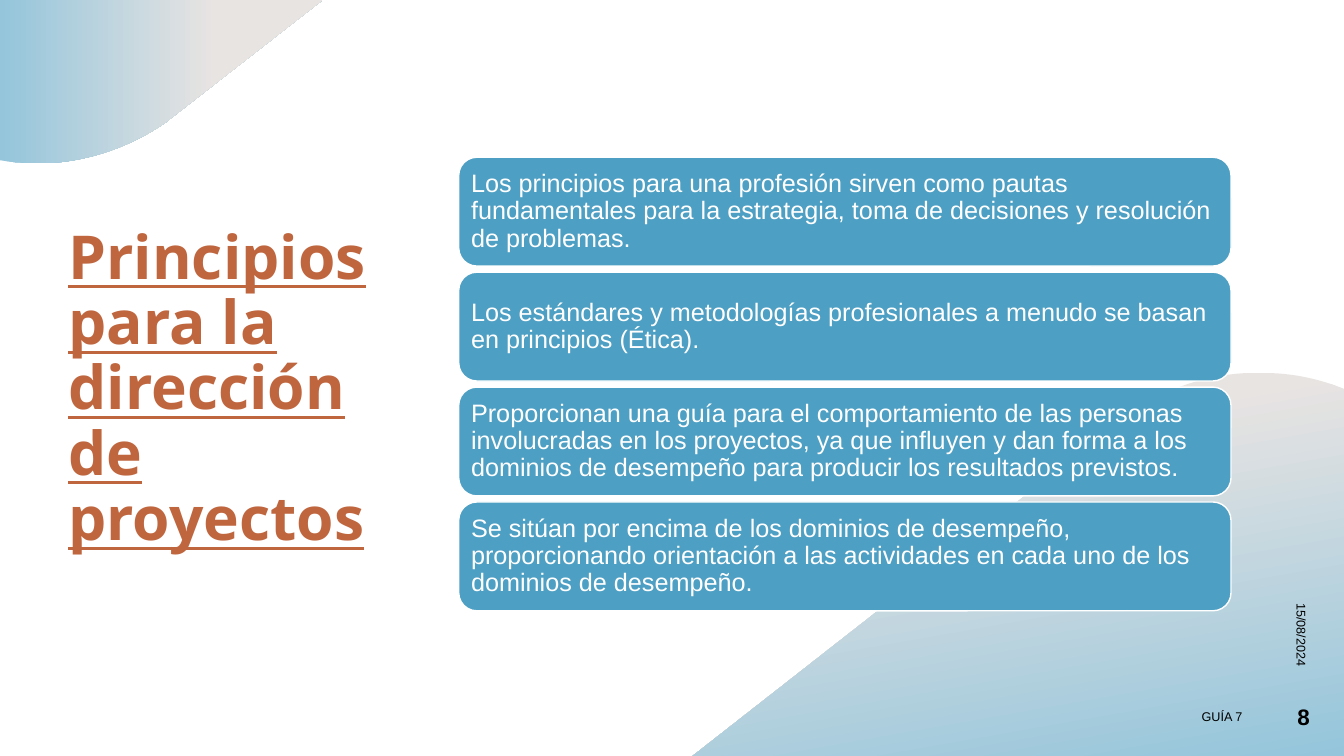
from pptx import Presentation
from pptx.dml.color import RGBColor
from pptx.enum.shapes import MSO_SHAPE as SHAPE
from pptx.enum.text import MSO_ANCHOR as ANCHOR, PP_ALIGN as ALIGN
from pptx.util import Pt

PX = 9144  # 100 px to the inch
BLUE = RGBColor(0x4D, 0x9F, 0xC3)
PALE_BLUE = RGBColor(0x94, 0xC5, 0xDB)
SAND = RGBColor(0xE8, 0xE4, 0xE2)
RUST = RGBColor(0xBF, 0x66, 0x3F)
WHITE = RGBColor(0xFF, 0xFF, 0xFF)
BLACK = RGBColor(0x00, 0x00, 0x00)

prs = Presentation()
prs.slide_width, prs.slide_height = 1333 * PX, 750 * PX
s = prs.slides.add_slide(prs.slide_layouts[6])


def outline(start, segments, steps=16):
    """Points of an outline; a segment is one point or three Bézier points."""
    points = [start]
    for seg in segments:
        if len(seg) == 1:
            points.append(seg[0])
            continue
        curve = [points[-1], *seg]
        for i in range(1, steps + 1):
            t = i / steps
            weights = ((1 - t) ** 3, 3 * t * (1 - t) ** 2, 3 * t * t * (1 - t), t ** 3)
            points.append(tuple(sum(w * c[k] for w, c in zip(weights, curve)) for k in (0, 1)))
    return points


def write(sp, text, font, anchor=ANCHOR.MIDDLE, align=ALIGN.LEFT, spacing=1.0, inset=None):
    tf = sp.text_frame
    tf.word_wrap = True
    tf.vertical_anchor = anchor
    if inset is not None:
        tf.margin_left = tf.margin_right = tf.margin_top = tf.margin_bottom = inset * PX
    p = tf.paragraphs[0]
    p.alignment, p.line_spacing = align, spacing
    r = p.add_run()
    r.text = text
    r.font.color.rgb = font["color"]
    for name, value in font.items():
        if name != "color":
            setattr(r.font, name, value)


# Gradient waves: start, segments, stops, angle
waves = [
    ((1253, 370),
     [[(1277, 370), (1300, 374), (1323, 382)], [(1333, 386)], [(1333, 750)], [(687, 750)],
      [(1116, 414)], [(1120, 410)], [(1157, 385), (1198, 371), (1240, 370)],
      [(1244, 370), (1248, 369), (1253, 370)]],
     [(0.23, SAND), (1, PALE_BLUE)], 280),
    ((0, 0),
     [[(320, 0)], [(170, 117)], [(165, 121)], [(129, 146), (88, 160), (46, 162)],
      [(42, 162), (37, 162), (33, 162)], [(27, 162), (21, 161), (15, 161)], [(0, 159)]],
     [(0, PALE_BLUE), (0.67, SAND)], 0),
]
for start, segments, stops, angle in waves:
    points = [(x * PX, y * PX) for x, y in outline(start, segments)]
    builder = s.shapes.build_freeform(*points[0])
    builder.add_line_segments(points[1:], close=True)
    sp = builder.convert_to_shape()
    sp.shadow.inherit = False
    sp.line.fill.background()
    sp.fill.gradient()
    sp.fill.gradient_angle = angle
    for stop, (position, color) in zip(sp.fill.gradient_stops, stops):
        stop.position, stop.color.rgb = position, color

# Title
title = s.shapes.add_textbox(58 * PX, 224 * PX, 325 * PX, 330 * PX)
title_font = {"name": "Noto Sans", "size": Pt(43.2), "bold": True, "underline": True, "color": RUST}
write(title, "Principios para la dirección de proyectos", title_font, ANCHOR.BOTTOM, spacing=0.9)

# Principle cards
principles = [
    "Los principios para una profesión sirven como pautas fundamentales para la estrategia, "
    "toma de decisiones y resolución de problemas.",
    "Los estándares y metodologías profesionales a menudo se basan en principios (Ética).",
    "Proporcionan una guía para el comportamiento de las personas involucradas en los proyectos, "
    "ya que influyen y dan forma a los dominios de desempeño para producir los resultados previstos.",
    "Se sitúan por encima de los dominios de desempeño, proporcionando orientación a las "
    "actividades en cada uno de los dominios de desempeño.",
]
card_font = {"name": "Arial", "size": Pt(18), "color": WHITE}
for i, text in enumerate(principles):
    card = s.shapes.add_shape(SHAPE.ROUNDED_RECTANGLE, 455 * PX, (156 + 114 * i) * PX, 766 * PX, 108 * PX)
    card.shadow.inherit = False
    card.fill.solid()
    card.fill.fore_color.rgb = BLUE
    card.line.color.rgb = WHITE
    card.line.width = Pt(1)
    write(card, text, card_font, spacing=0.9, inset=7)

# Date, footer and slide number: text, left, top, width, rotation, size, bold
footers = [
    ("15/08/2024", 1146, 506, 290, 90, 9, False),
    ("GUÍA 7", 942, 691, 300, 0, 9, False),
    ("8", 1242, 691, 67, 0, 16, True),
]
for text, left, top, width, rotation, size, bold in footers:
    box = s.shapes.add_textbox(left * PX, top * PX, width * PX, 40 * PX)
    box.rotation = rotation
    footer_font = {"name": "Arial", "size": Pt(size), "bold": bold, "color": BLACK}
    write(box, text, footer_font, align=ALIGN.RIGHT)

prs.save("out.pptx")
